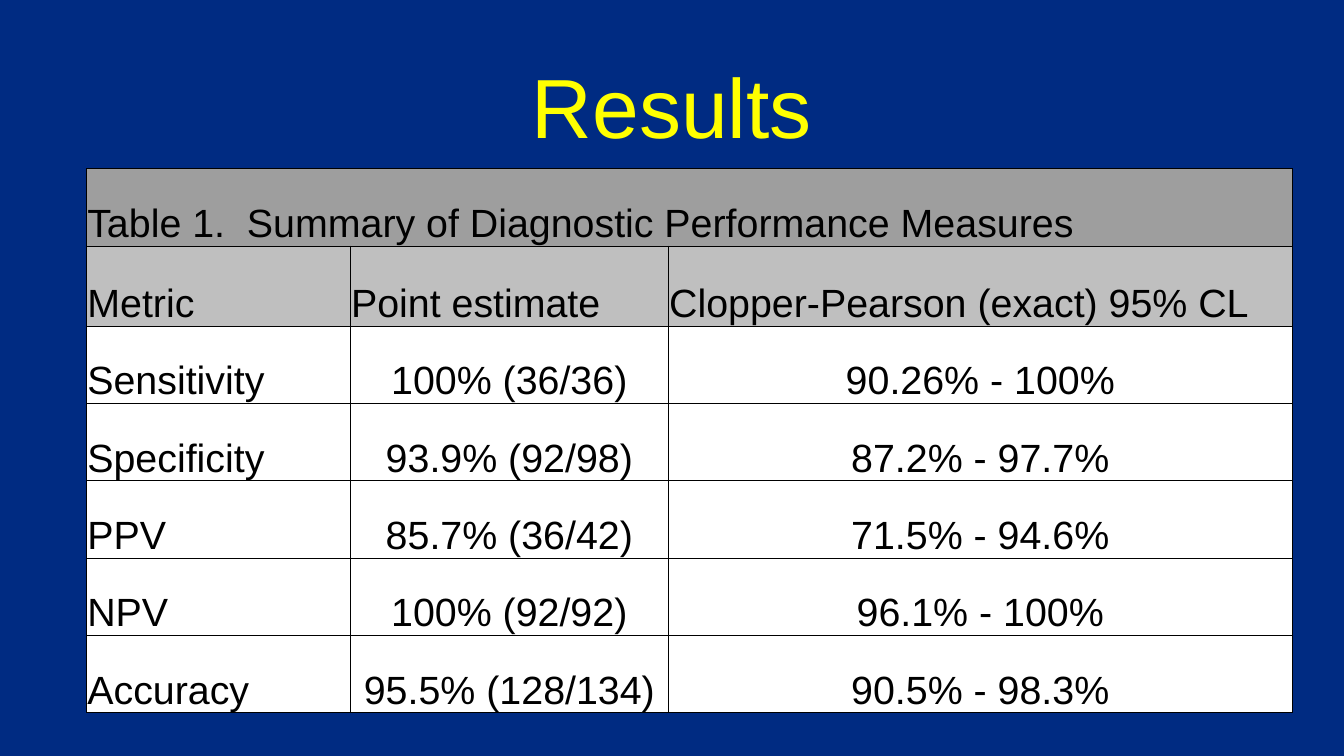
import pptx
import pptx.dml.color
import pptx.enum.text
import pptx.oxml
import pptx.oxml.ns
import pptx.util

Cm = pptx.util.Cm
Pt = pptx.util.Pt
RGB = pptx.dml.color.RGBColor
ALIGN = pptx.enum.text.PP_ALIGN
ANCHOR = pptx.enum.text.MSO_ANCHOR

NAVY = RGB(0x00, 0x2B, 0x82)
YELLOW = RGB(0xFF, 0xFF, 0x00)
BLACK = RGB(0x00, 0x00, 0x00)
WHITE = RGB(0xFF, 0xFF, 0xFF)
GREY = RGB(0x9E, 0x9E, 0x9E)
SILVER = RGB(0xBF, 0xBF, 0xBF)

CAPTION = "Table 1.  Summary of Diagnostic Performance Measures"
ROWS = [
    (CAPTION, "", ""),
    ("Metric", "Point estimate", "Clopper-Pearson (exact) 95% CL"),
    ("Sensitivity", "100% (36/36)", "90.26% - 100%"),
    ("Specificity", "93.9% (92/98)", "87.2% - 97.7%"),
    ("PPV", "85.7% (36/42)", "71.5% - 94.6%"),
    ("NPV", "100% (92/92)", "96.1% - 100%"),
    ("Accuracy", "95.5% (128/134)", "90.5% - 98.3%"),
]
WIDTHS = [9.45, 11.4, 22.35]
HEIGHTS = [2.77, 2.87] + [2.77] * 5


class Deck:
    """Hold the style and the current slide."""

    font = "Arial"

    def __init__(self, width, height):
        self.show = pptx.Presentation()
        self.show.slide_width = Cm(width)
        self.show.slide_height = Cm(height)
        self.slide = self.show.slides.add_slide(self.show.slide_layouts[5])
        fill = self.slide.background.fill
        fill.solid()
        fill.fore_color.rgb = NAVY

    def style(self, par, size, color, align):
        par.alignment = align
        par.font.name = self.font
        par.font.size = Pt(size)
        par.font.color.rgb = color

    def title(self, text, left, top, width, height):
        shape = self.slide.shapes.title
        shape.left, shape.top = Cm(left), Cm(top)
        shape.width, shape.height = Cm(width), Cm(height)
        frame = shape.text_frame
        frame.text = text
        frame.auto_size = pptx.enum.text.MSO_AUTO_SIZE.NONE
        frame.vertical_anchor = ANCHOR.BOTTOM
        self.style(frame.paragraphs[0], 85.3, YELLOW, ALIGN.CENTER)

    def border(self, cell):
        props = cell._tc.get_or_add_tcPr()
        for side in ("lnL", "lnR", "lnT", "lnB"):
            props.append(pptx.oxml.parse_xml(
                f'<a:{side} {pptx.oxml.ns.nsdecls("a")} w="{Pt(1)}">'
                f'<a:solidFill><a:srgbClr val="{BLACK}"/></a:solidFill>'
                f'</a:{side}>'))

    def cell(self, cell, text, fill, align):
        self.border(cell)
        cell.fill.solid()
        cell.fill.fore_color.rgb = fill
        cell.margin_left = cell.margin_right = cell.margin_top = Cm(0.03)
        cell.margin_bottom = 0
        cell.vertical_anchor = ANCHOR.BOTTOM
        cell.text = text
        self.style(cell.text_frame.paragraphs[0], 40, BLACK, align)

    def table(self, rows, left, top, widths, heights):
        frame = self.slide.shapes.add_table(
            len(rows), len(widths), Cm(left), Cm(top),
            Cm(sum(widths)), Cm(sum(heights)))
        table = frame.table
        table.first_row = table.horz_banding = False
        for col, width in zip(table.columns, widths):
            col.width = Cm(width)
        for row, height in zip(table.rows, heights):
            row.height = Cm(height)
        fills = [GREY, SILVER] + [WHITE] * (len(rows) - 2)
        for r, (row, fill) in enumerate(zip(rows, fills)):
            for c, text in enumerate(row):
                align = ALIGN.CENTER if r > 1 and c else ALIGN.LEFT
                self.cell(table.cell(r, c), text, fill, align)
        table.cell(0, 0).merge(table.cell(0, len(widths) - 1))


def main():
    deck = Deck(48.16, 27.1)
    deck.title("Results", 5.87, 1.57, 36.42, 4.14)
    deck.table(ROWS, 3.1, 6.05, WIDTHS, HEIGHTS)
    deck.show.save("out.pptx")


if __name__ == "__main__":
    main()
